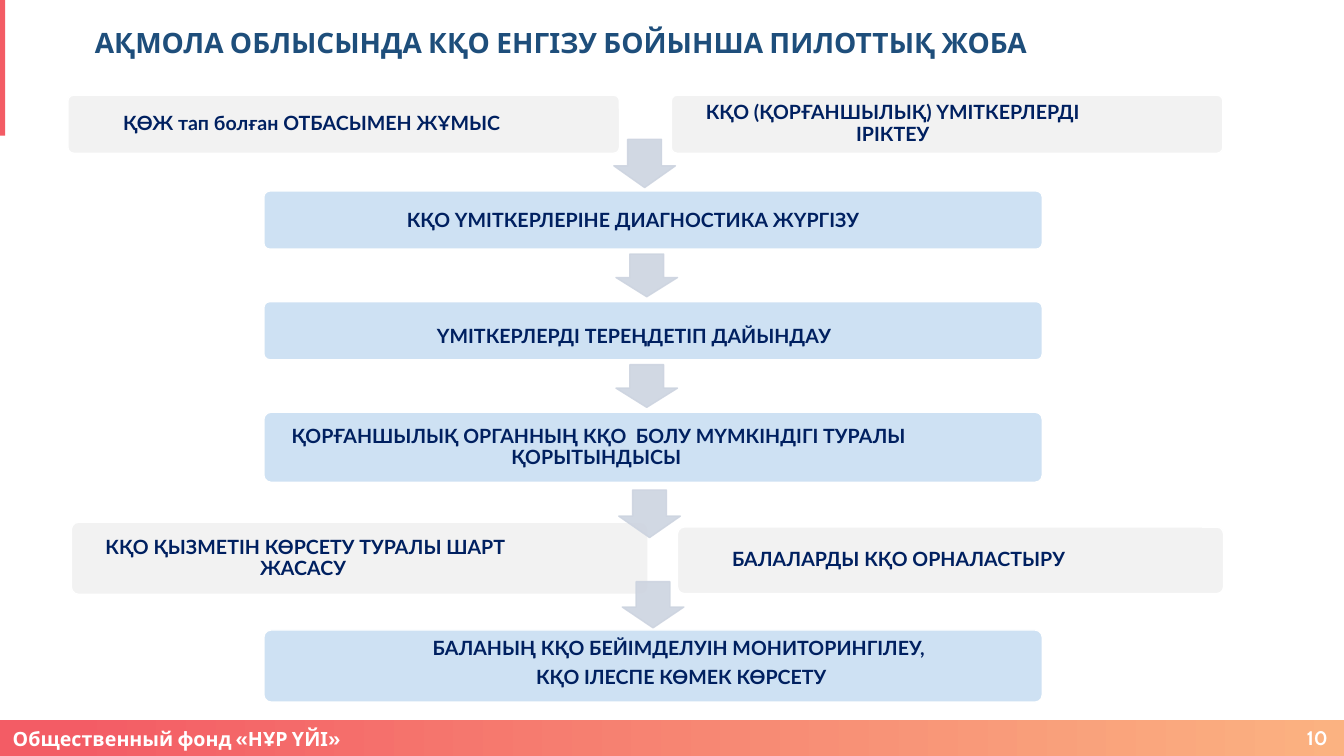
from dataclasses import dataclass

from lxml.etree import SubElement
from pptx import Presentation
from pptx.dml.color import RGBColor
from pptx.enum.shapes import MSO_SHAPE
from pptx.enum.text import MSO_ANCHOR, MSO_AUTO_SIZE, PP_ALIGN
from pptx.oxml.ns import qn
from pptx.util import Pt


@dataclass(frozen=True)
class Theme:
    title_font: str = "Cabin"
    body_font: str = "Lato"
    title_size: float = 20
    body_size: float = 14
    title: str = "1E4E7B"
    navy: str = "002060"
    white: str = "FFFFFF"
    coral: str = "F35C65"
    peach: str = "FBB281"
    step: str = "CEE1F3"
    branch: str = "F2F2F2"
    arrow: str = "CDD4E0"
    arrow_opacity: int = 90


class FlowSlide:
    def __init__(self, slide, theme):
        self.slide = slide
        self.theme = theme

    def shape(self, kind, box, color):
        shape = self.slide.shapes.add_shape(kind, *map(Pt, box))
        shape.shadow.inherit = False
        shape.fill.solid()
        shape.fill.fore_color.rgb = RGBColor.from_string(color)
        shape.line.fill.background()
        return shape

    def outline(self, shape, color):
        shape.line.color.rgb = RGBColor.from_string(color)
        shape.line.width = Pt(1)

    def bar(self, box, *colors):
        bar = self.shape(MSO_SHAPE.RECTANGLE, box, colors[0])
        if len(colors) > 1:
            bar.fill.gradient()
            bar.fill.gradient_angle = 0
            for stop, color, position in zip(bar.fill.gradient_stops, colors, (0.05, 1)):
                stop.color.rgb = RGBColor.from_string(color)
                stop.position = position

    def band(self, box, color, text=None):
        band = self.shape(MSO_SHAPE.ROUNDED_RECTANGLE, box, color)
        band.adjustments[0] = 0.1
        self.outline(band, self.theme.white)
        if text:
            self.step_text(band, [[(text, self.theme.body_size)]], (6.5, 6.5, 84, 6.5))

    def arrow(self, left, top, height):
        arrow = self.shape(MSO_SHAPE.DOWN_ARROW, (left, top, 44, height), self.theme.arrow)
        arrow.adjustments[0] = 0.55
        arrow.adjustments[1] = 0.45
        self.outline(arrow, self.theme.arrow)
        for color in arrow.element.spPr.iter(qn("a:srgbClr")):
            SubElement(color, qn("a:alpha"), val=str(self.theme.arrow_opacity * 1000))

    def fill_text(self, shape, paragraphs, font, color, align, insets=(7.2, 3.6, 7.2, 3.6),
                  line_spacing=1.0, space_after=0):
        frame = shape.text_frame
        frame.word_wrap = True
        frame.auto_size = MSO_AUTO_SIZE.NONE
        frame.vertical_anchor = MSO_ANCHOR.MIDDLE
        (frame.margin_left, frame.margin_top,
         frame.margin_right, frame.margin_bottom) = map(Pt, insets)
        for index, runs in enumerate(paragraphs):
            paragraph = frame.add_paragraph() if index else frame.paragraphs[0]
            paragraph.alignment = align
            paragraph.line_spacing = line_spacing
            paragraph.space_after = Pt(space_after)
            for text, size in runs:
                run = paragraph.add_run()
                run.text = text
                run.font.name = font
                run.font.size = Pt(size)
                run.font.bold = True
                run.font.color.rgb = RGBColor.from_string(color)

    def step_text(self, shape, paragraphs, insets):
        self.fill_text(shape, paragraphs, self.theme.body_font, self.theme.navy,
                       PP_ALIGN.CENTER, insets, 0.9, 5)

    def caption(self, box, *paragraphs):
        caption = self.slide.shapes.add_textbox(*map(Pt, box))
        self.step_text(caption, paragraphs, (5.8, 2.9, 5.8, 2.9))

    def footer(self, box, text, align):
        footer = self.slide.shapes.add_textbox(*map(Pt, box))
        self.fill_text(footer, [[(text, self.theme.body_size)]], self.theme.title_font,
                       self.theme.white, align)

    def title(self, box, text):
        title = self.slide.shapes.title
        title.left, title.top, title.width, title.height = map(Pt, box)
        self.fill_text(title, [[(text, self.theme.title_size)]], self.theme.title_font,
                       self.theme.title, PP_ALIGN.LEFT)


def main():
    deck = Presentation()
    deck.slide_width, deck.slide_height = Pt(960), Pt(540)
    theme = Theme()
    flow = FlowSlide(deck.slides.add_slide(deck.slide_layouts[5]), theme)
    size = theme.body_size

    flow.bar((0, 514, 960, 26), theme.coral, theme.peach)
    flow.bar((0, 0, 3.6, 97), theme.coral)
    flow.footer((2, 520, 661, 15), "Общественный фонд «НҰР ҮЙІ»", PP_ALIGN.LEFT)
    flow.footer((916, 518, 39.5, 18.5), "10", PP_ALIGN.RIGHT)
    flow.title((60.5, 5, 762.5, 51), "АҚМОЛА ОБЛЫСЫНДА КҚО ЕНГІЗУ БОЙЫНША ПИЛОТТЫҚ ЖОБА")

    branches = [
        ((48.5, 68, 394, 41.5), None),
        ((479.5, 68, 394, 41.5), "КҚО (ҚОРҒАНШЫЛЫҚ) ҮМІТКЕРЛЕРДІ ІРІКТЕУ"),
        ((51, 373, 412, 51.5), "КҚО ҚЫЗМЕТІН КӨРСЕТУ ТУРАЛЫ ШАРТ ЖАСАСУ "),
        ((484, 376.5, 390, 47.5), " БАЛАЛАРДЫ КҚО ОРНАЛАСТЫРУ"),
    ]
    for box, text in branches:
        flow.band(box, theme.branch, text)

    steps = [
        (136.5, 41.5, None),
        (215.5, 41.5, None),
        (294.5, 50, "ҚОРҒАНШЫЛЫҚ ОРГАННЫҢ КҚО  БОЛУ МҮМКІНДІГІ ТУРАЛЫ ҚОРЫТЫНДЫСЫ "),
        (450, 51.5, None),
    ]
    for top, height, text in steps:
        flow.band((188.5, top, 556, height), theme.step, text)

    arrows = [(438.5, 99.5, 34.5), (440, 181.5, 30.5), (440, 260.5, 30.5),
              (442, 350, 34), (444.5, 415.5, 33)]
    for left, top, height in arrows:
        flow.arrow(left, top, height)

    flow.caption((48.5, 64, 348.5, 49), [("ҚӨЖ тап болған ОТБАСЫМЕН ЖҰМЫС", size)])
    flow.caption((255, 137.5, 394.5, 40.5), [("КҚО ҮМІТКЕРЛЕРІНЕ ДИАГНОСТИКА ЖҮРГІЗУ", size)])
    flow.caption((255, 214.5, 394.5, 49),
                 [(" ", theme.title_size), ("ҮМІТКЕРЛЕРДІ ТЕРЕҢДЕТІП ДАЙЫНДАУ ", size)])
    flow.caption((256.5, 449.5, 457, 49),
                 [("БАЛАНЫҢ КҚО БЕЙІМДЕЛУІН МОНИТОРИНГІЛЕУ,", size)],
                 [(" КҚО ІЛЕСПЕ КӨМЕК КӨРСЕТУ", size)])

    deck.save("out.pptx")


if __name__ == "__main__":
    main()
